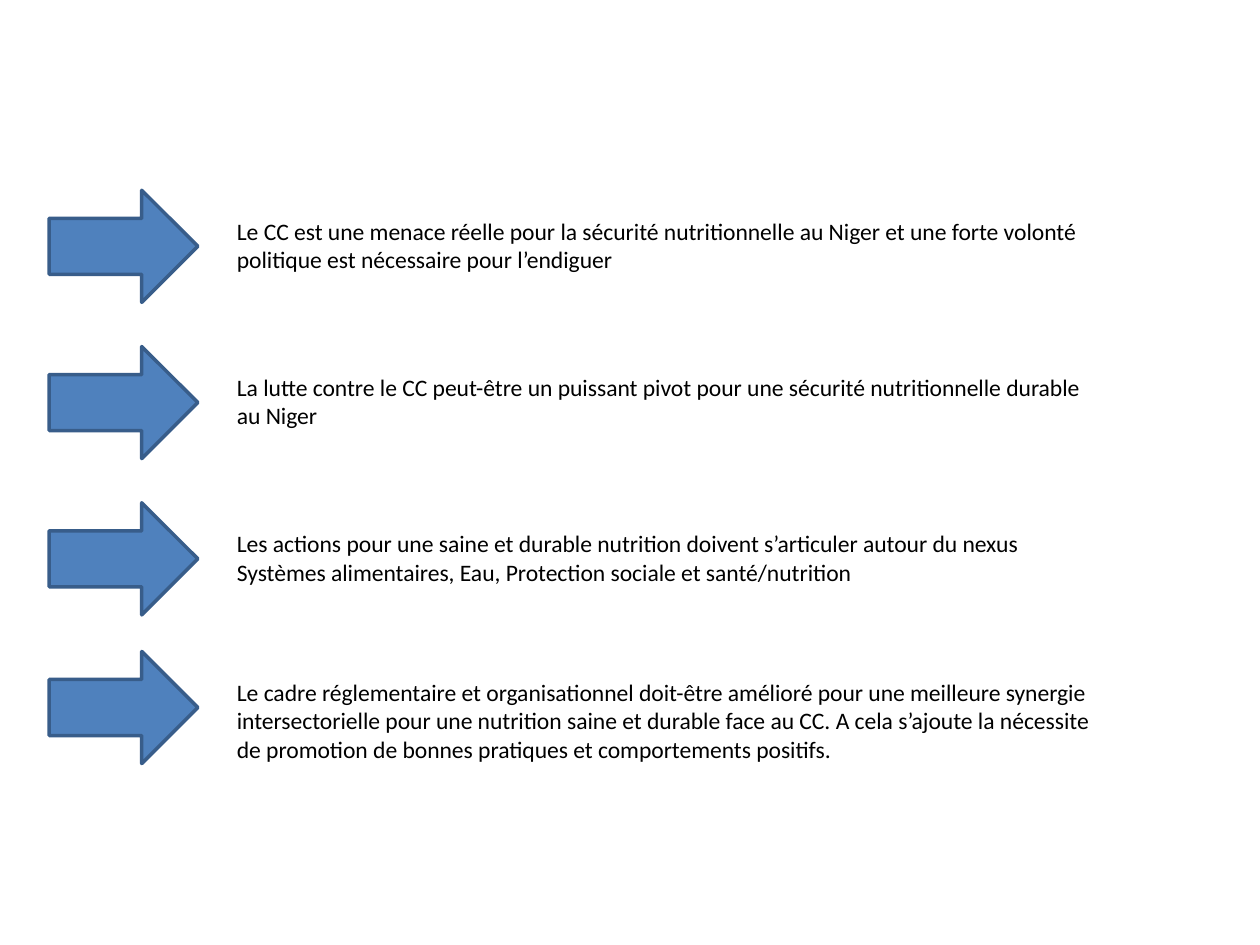
from pptx import Presentation
from pptx.dml.color import RGBColor
from pptx.enum.shapes import MSO_SHAPE as SHAPE
from pptx.enum.text import MSO_AUTO_SIZE as AUTO_SIZE
from pptx.util import Emu, Pt

PX = 9144
MESSAGES = [
    (151, 53, "Le CC est une menace réelle pour la sécurité nutritionnelle au Niger "
              "et une forte volonté politique est nécessaire pour l’endiguer"),
    (275, 53, "La lutte contre le CC peut-être un puissant pivot pour une sécurité "
              "nutritionnelle durable au Niger"),
    (399, 53, "Les actions pour une saine et durable nutrition doivent s’articuler "
              "autour du nexus Systèmes alimentaires, Eau, Protection sociale et "
              "santé/nutrition"),
    (517, 76, "Le cadre réglementaire et organisationnel doit-être amélioré pour une "
              "meilleure synergie intersectorielle pour une nutrition saine et durable "
              "face au CC. A cela s’ajoute la nécessite de promotion de bonnes "
              "pratiques et comportements positifs."),
]


def px(*values):
    """Turn px lengths into EMU."""
    return [Emu(v * PX) for v in values]


def rgb(color):
    """Turn a hex string into a colour."""
    return RGBColor.from_string(color)


def add_text(slide, box, text, size=13.5, font="Calibri", color="000000"):
    """Add a wrapped text box with one formatted paragraph."""
    tf = slide.shapes.add_textbox(*px(*box)).text_frame
    tf.word_wrap = True
    tf.auto_size = AUTO_SIZE.SHAPE_TO_FIT_TEXT
    tf.margin_left, tf.margin_top, tf.margin_right, tf.margin_bottom = px(7, 4, 7, 4)
    r = tf.paragraphs[0].add_run()
    r.text = text
    r.font.size, r.font.name = Pt(size), font
    r.font.color.rgb = rgb(color)


def add_arrow(slide, box, fill="4F81BD", line="385D8A"):
    """Add a right arrow filling the box."""
    sp = slide.shapes.add_shape(SHAPE.RIGHT_ARROW, *px(*box))
    sp.shadow.inherit = False
    sp.fill.solid()
    sp.fill.fore_color.rgb = rgb(fill)
    sp.line.color.rgb = rgb(line)
    sp.line.width = Pt(2)


def add_message(slide, box, text):
    """Add an arrow with its message on the right of the box."""
    left, top, width, text_height = box
    add_arrow(slide, (left, top, 118, 89))
    add_text(slide, (left + 142, top + 17, width - 142, text_height), text)


def main():
    """Build the slide of key messages."""
    prs = Presentation()
    prs.slide_width, prs.slide_height = px(1000, 750)
    slide = prs.slides.add_slide(prs.slide_layouts[6])
    for top, text_height, text in MESSAGES:
        add_message(slide, (39, top, 833, text_height), text)
    prs.save("out.pptx")


if __name__ == "__main__":
    main()
